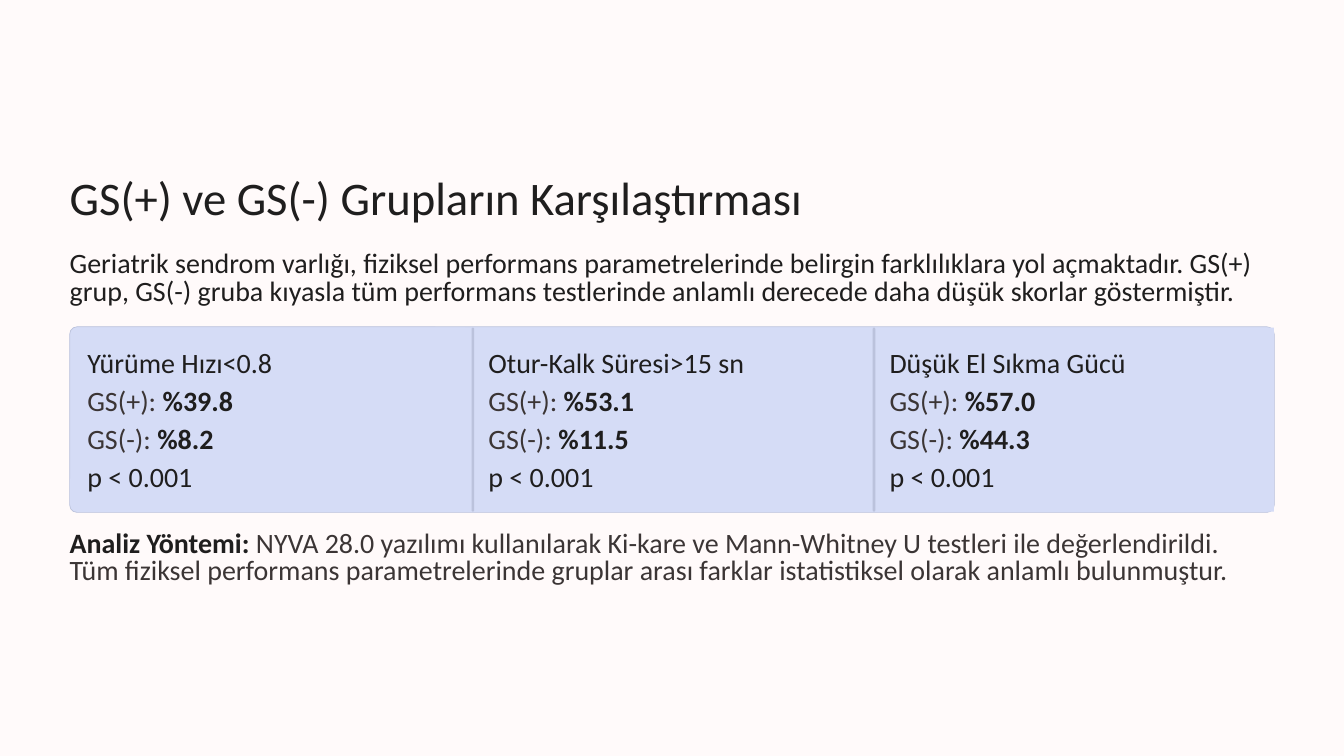
from pptx import Presentation
from pptx.dml.color import RGBColor
from pptx.enum import shapes, text
from pptx.util import Inches, Pt

COLORS = {
    "page": "FFFAFA",
    "panel": "D5DCF6",
    "border": "BBC2DC",
    "dark": "1F1E1E",
    "soft": "3B3535",
}
FONT = "Calibri"
LEFT, WIDTH = 0.83, 14.34
PANEL_TOP, PANEL_HEIGHT = 3.89, 2.21
CARD_LEFT, CARD_TOP = 0.84, 3.9
CARD_WIDTH, CARD_HEIGHT = 4.775, 2.19
CARD_PADDING = 0.2
RESULT_TOP, RESULT_STEP = 4.64, 0.455

INTRO = (
    "Geriatrik sendrom varlığı, fiziksel performans parametrelerinde belirgin "
    "farklılıklara yol açmaktadır. GS(+) grup, GS(-) gruba kıyasla tüm performans "
    "testlerinde anlamlı derecede daha düşük skorlar göstermiştir."
)
METHOD = (
    " NYVA 28.0 yazılımı kullanılarak Ki-kare ve Mann-Whitney U testleri ile "
    "değerlendirildi. Tüm fiziksel performans parametrelerinde gruplar arası "
    "farklar istatistiksel olarak anlamlı bulunmuştur."
)
COMPARISONS = [
    ("Yürüme Hızı<0.8", "%39.8", "%8.2"),
    ("Otur-Kalk Süresi>15 sn", "%53.1", "%11.5"),
    ("Düşük El Sıkma Gücü", "%57.0", "%44.3"),
]


def color(name):
    return RGBColor.from_string(COLORS[name])


def write(frame, parts, size=24, spacing=23.5):
    frame.word_wrap = True
    frame.auto_size = text.MSO_AUTO_SIZE.NONE
    frame.vertical_anchor = text.MSO_ANCHOR.TOP
    frame.margin_left = frame.margin_right = 0
    frame.margin_top = frame.margin_bottom = 0
    paragraph = frame.paragraphs[0]
    paragraph.alignment = text.PP_ALIGN.LEFT
    paragraph.line_spacing = Pt(spacing)
    for words, tone, bold in parts:
        run = paragraph.add_run()
        run.text = words
        run.font.name = FONT
        run.font.size = Pt(size)
        run.font.bold = bold
        run.font.color.rgb = color(tone)


def add_title(slide, words):
    title = slide.shapes.title
    title.left, title.top = Inches(LEFT), Inches(2)
    title.width, title.height = Inches(10.65), Inches(0.68)
    write(title.text_frame, [(words, "dark", False)], 40, 49)


def add_text(slide, left, top, width, height, parts, spacing=23.5):
    box = slide.shapes.add_textbox(
        Inches(left), Inches(top), Inches(width), Inches(height)
    )
    write(box.text_frame, parts, spacing=spacing)


def add_block(slide, left, top, width, height, fill, radius=0, line=None):
    kind = shapes.MSO_SHAPE.ROUNDED_RECTANGLE if radius else shapes.MSO_SHAPE.RECTANGLE
    block = slide.shapes.add_shape(
        kind, Inches(left), Inches(top), Inches(width), Inches(height)
    )
    if radius:
        block.adjustments[0] = radius
    block.shadow.inherit = False
    block.fill.solid()
    block.fill.fore_color.rgb = color(fill)
    if line:
        block.line.color.rgb = color(line)
        block.line.width = Pt(0.6)
    else:
        block.line.fill.background()


def add_comparison(slide, index, heading, positive, negative):
    left = CARD_LEFT + index * CARD_WIDTH
    text_left = left + CARD_PADDING
    add_block(slide, left, CARD_TOP, CARD_WIDTH, CARD_HEIGHT, "panel",
              radius=0 if index else 0.04)
    if index:
        add_block(slide, left, CARD_TOP, 0.03, CARD_HEIGHT, "border", radius=0.5)
    add_text(slide, text_left, 4.11, 4.36, 0.41, [(heading, "dark", False)], 29)
    results = [
        [("GS(+): ", "soft", False), (positive, "dark", True)],
        [("GS(-): ", "soft", False), (negative, "dark", True)],
        [("p < 0.001", "dark", False)],
    ]
    for row, parts in enumerate(results):
        add_text(slide, text_left, RESULT_TOP + row * RESULT_STEP, 4.36, 0.33, parts)


def main():
    deck = Presentation()
    deck.slide_width, deck.slide_height = Inches(16), Inches(9)
    slide = deck.slides.add_slide(deck.slide_layouts[5])
    slide.background.fill.solid()
    slide.background.fill.fore_color.rgb = color("page")

    add_title(slide, "GS(+) ve GS(-) Grupların Karşılaştırması")
    add_text(slide, LEFT, 3, WIDTH, 0.66, [(INTRO, "dark", False)])
    add_block(slide, LEFT, PANEL_TOP, WIDTH, PANEL_HEIGHT, "panel",
              radius=0.04, line="border")
    for index, comparison in enumerate(COMPARISONS):
        add_comparison(slide, index, *comparison)
    add_text(slide, LEFT, 6.33, WIDTH, 0.66,
             [("Analiz Yöntemi:", "dark", True), (METHOD, "soft", False)])
    deck.save("out.pptx")


if __name__ == "__main__":
    main()
